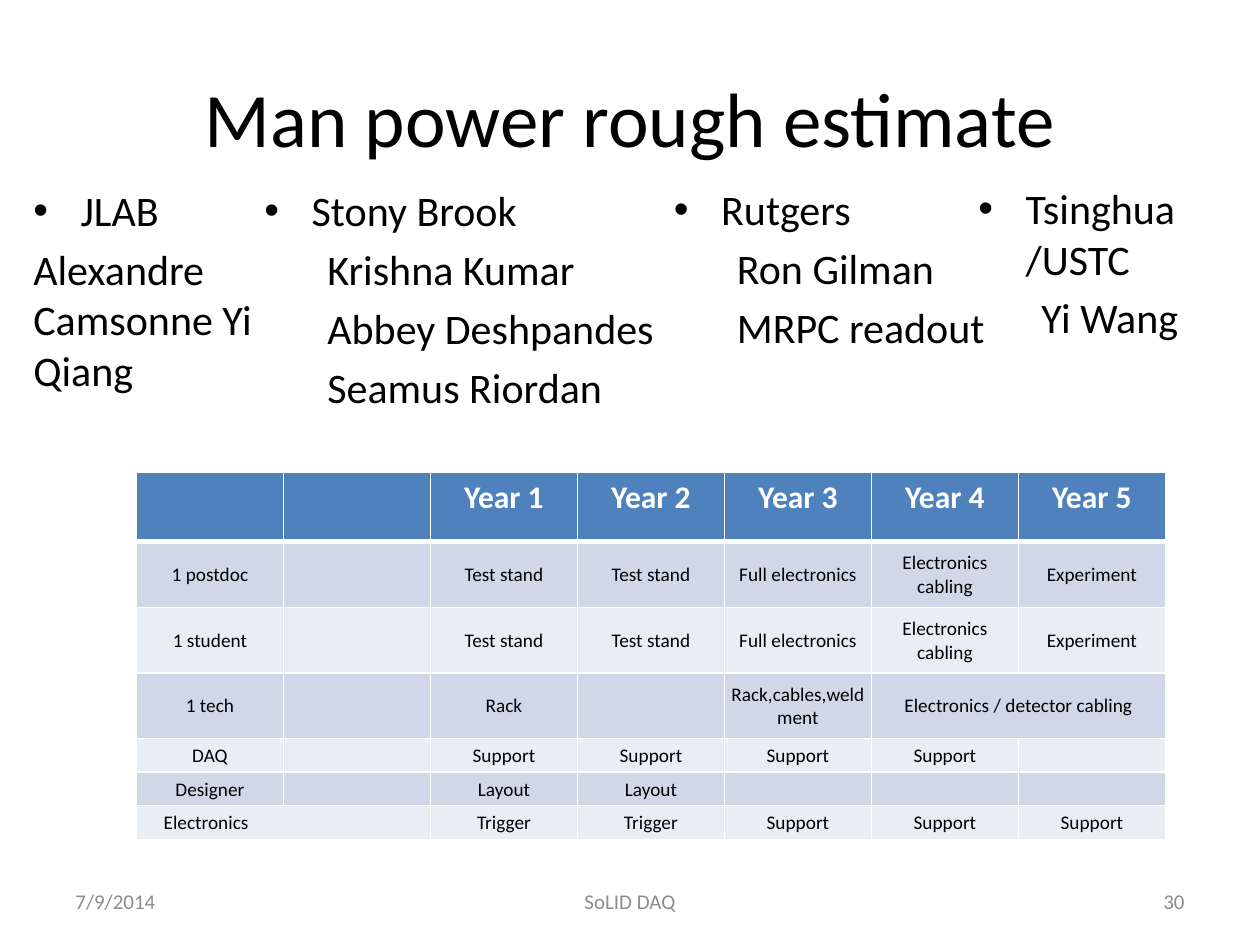
from lxml import etree
from pptx import Presentation
from pptx.dml.color import RGBColor
from pptx.enum.text import MSO_ANCHOR, PP_ALIGN
from pptx.oxml.ns import qn
from pptx.util import Pt

LEFT, CENTER, RIGHT = PP_ALIGN.LEFT, PP_ALIGN.CENTER, PP_ALIGN.RIGHT
TOP, MIDDLE = MSO_ANCHOR.TOP, MSO_ANCHOR.MIDDLE

FONT = "Calibri"
COLORS = {"text": "000000", "footer": "8C8C8C", "header": "4F81BD",
          "odd": "D0D8E8", "even": "E9EDF4", "white": "FFFFFF"}

# Group name, its members, and the box that holds them
INDENT = 36
GROUPS = [
    ("JLAB", ["Alexandre\vCamsonne Yi Qiang"], 0, (12, 102, 180, 356)),
    ("Stony Brook", ["Krishna Kumar", "Abbey Deshpandes", "Seamus Riordan"],
     INDENT, (144, 102, 312, 356)),
    ("Rutgers", ["Ron Gilman", "MRPC readout"], INDENT, (378, 101.5, 312, 356)),
    ("Tsinghua\v/USTC", ["Yi Wang"], INDENT, (552, 100.8, 312, 356)),
]

PLAN = [
    ["", "", "Year 1", "Year 2", "Year 3", "Year 4", "Year 5"],
    ["1 postdoc", "", "Test stand", "Test stand", "Full electronics",
     "Electronics cabling", "Experiment"],
    ["1 student", "", "Test stand", "Test stand", "Full electronics",
     "Electronics cabling", "Experiment"],
    ["1 tech", "", "Rack", "", "Rack,cables,weldment",
     "Electronics / detector cabling", ""],
    ["DAQ", "", "Support", "Support", "Support", "Support", ""],
    ["Designer", "", "Layout", "Layout", "", "", ""],
    ["Electronics", "", "Trigger", "Trigger", "Support", "Support", "Support"],
]
ROW_HEIGHTS = [39.6] + [37.5] * 3 + [19.2] * 3
MERGES = [((3, 5), (3, 6)), ((6, 0), (6, 1))]
ELECTRONICS = (6, 0)  # the one left-aligned cell


def rgb(name):
    return RGBColor.from_string(COLORS[name])


def style(para, size, color, align=LEFT, bold=False):
    para.alignment = align
    para.font.name = FONT
    para.font.size = Pt(size)
    para.font.bold = bold
    para.font.color.rgb = rgb(color)


def add_frame(page, box, anchor=TOP):
    frame = page.shapes.add_textbox(*map(Pt, box)).text_frame
    frame.word_wrap = True
    frame.vertical_anchor = anchor
    return frame


def add_line(page, box, text, size, color, align):
    """One line of text, centred vertically in its box."""
    para = add_frame(page, box, MIDDLE).paragraphs[0]
    para.text = text
    style(para, size, color, align)


def set_indent(para, left, first=0, bullet=None):
    props = para._p.get_or_add_pPr()
    props.set("marL", str(Pt(left)))
    props.set("indent", str(Pt(first)))
    if bullet:
        etree.SubElement(props, qn("a:buFont")).set("typeface", "Arial")
        etree.SubElement(props, qn("a:buChar")).set("char", bullet)
    else:
        etree.SubElement(props, qn("a:buNone"))


def add_group(page, box, name, members, indent):
    """A bulleted group name with its members below."""
    frame = add_frame(page, box)
    for index, text in enumerate([name] + members):
        para = frame.add_paragraph() if index else frame.paragraphs[0]
        para.text = text
        if index:
            set_indent(para, indent)
        else:
            set_indent(para, 27, -27, "•")
        para.space_before = Pt(4.8)
        style(para, 24, "text")


def set_borders(cell, bottom, top):
    props = cell._tc.get_or_add_tcPr()
    widths = {"a:lnL": 1, "a:lnR": 1, "a:lnT": top, "a:lnB": bottom}
    for place, (tag, width) in enumerate(widths.items()):
        line = etree.Element(qn(tag), w=str(Pt(width)))
        fill = etree.SubElement(line, qn("a:solidFill"))
        etree.SubElement(fill, qn("a:srgbClr")).set("val", COLORS["white"])
        props.insert(place, line)


def fill_cell(cell, text, row, is_left):
    is_header = row == 0
    size = 18 if is_header else 11
    cell.fill.solid()
    cell.fill.fore_color.rgb = rgb("header" if is_header else "odd" if row % 2 else "even")
    set_borders(cell, 3 if is_header else 1, 3 if row == 1 else 1)
    if not is_header:
        cell.vertical_anchor = MIDDLE
        cell.margin_left = Pt(15.5 if is_left else 0.7)
        cell.margin_right = cell.margin_top = Pt(0.7)
        cell.margin_bottom = Pt(0)
    para = cell.text_frame.paragraphs[0]
    if text:
        para.text = text
        style(para, size, "white" if is_header else "text",
              LEFT if is_left else CENTER, is_header)
    else:
        # Keeps empty cells from stretching their row
        etree.SubElement(para._p, qn("a:endParaRPr")).set("sz", str(size * 100))


def add_plan(page, box):
    """Work plan by role and year."""
    columns = len(PLAN[0])
    table = page.shapes.add_table(len(PLAN), columns, *map(Pt, box)).table
    table.first_row = table.horz_banding = False
    for column in table.columns:
        column.width = Pt(box[2] / columns)
    for row, (height, texts) in enumerate(zip(ROW_HEIGHTS, PLAN)):
        table.rows[row].height = Pt(height)
        for col, text in enumerate(texts):
            fill_cell(table.cell(row, col), text, row, (row, col) == ELECTRONICS)
    for start, end in MERGES:
        table.cell(*start).merge(table.cell(*end))


def add_footer(page, box):
    """Date, name and page number along the bottom."""
    left, top, width, height = box
    side, middle = 168, 228
    parts = [("7/9/2014", left, side, LEFT),
             ("SoLID DAQ", left + (width - middle) / 2, middle, CENTER),
             ("30", left + width - side, side, RIGHT)]
    for text, x, part_width, align in parts:
        add_line(page, (x, top, part_width, height), text, 12, "footer", align)


def main():
    deck = Presentation()
    deck.slide_width, deck.slide_height = Pt(720), Pt(540)
    page = deck.slides.add_slide(deck.slide_layouts[6])
    add_line(page, (36, 21.6, 648, 90), "Man power rough estimate", 44, "text", CENTER)
    for name, members, indent, box in GROUPS:
        add_group(page, box, name, members, indent)
    add_plan(page, (78, 270, 588, sum(ROW_HEIGHTS)))
    add_footer(page, (36, 500.5, 648, 28.8))
    deck.save("out.pptx")


if __name__ == "__main__":
    main()
